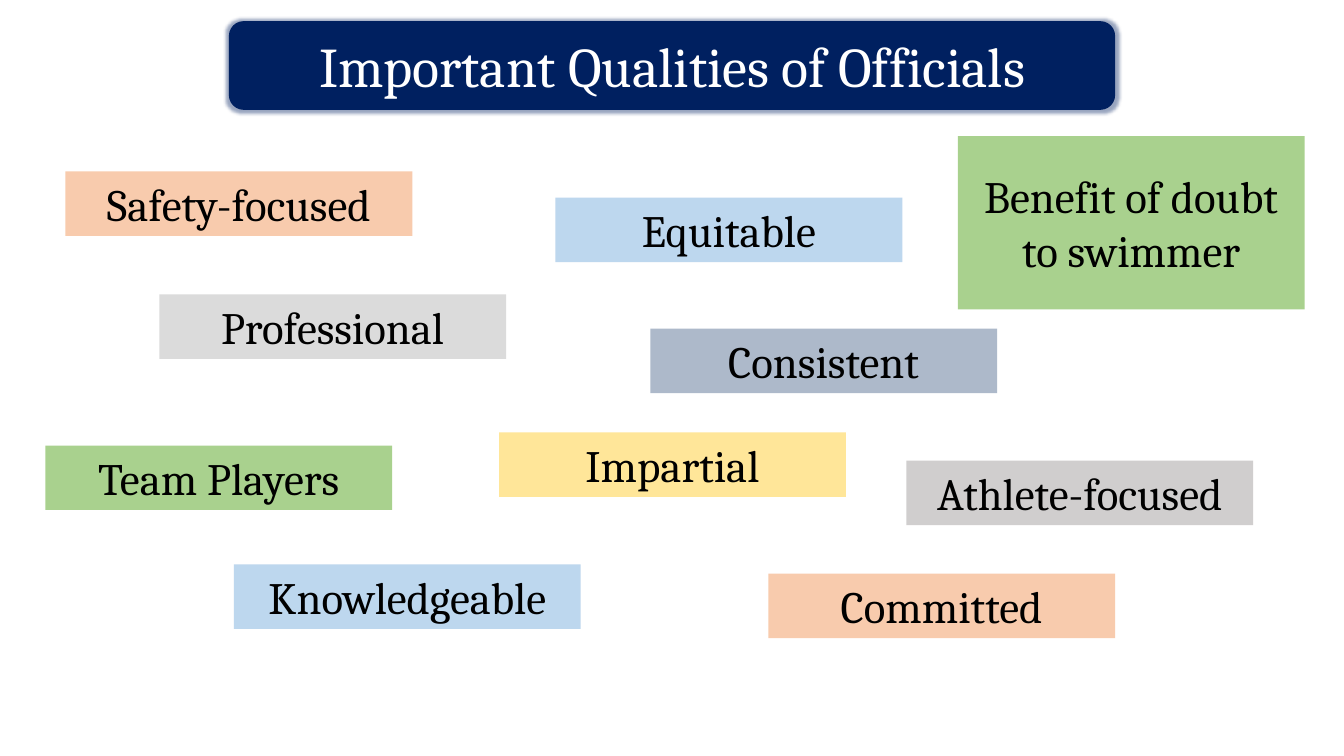
from lxml import etree
from pptx import Presentation
from pptx import util as u
from pptx.dml import color
from pptx.enum import shapes, text
from pptx.oxml import ns

FONT = "Cambria"
CARD_WIDTH, CARD_HEIGHT = 3.44, 0.64
QUALITIES = [
    ("Safety-focused", 0.65, 1.7, "F8CBAD"),
    ("Professional", 1.58, 2.92, "DBDBDB"),
    ("Impartial", 4.95, 4.29, "FFE699"),
    ("Team Players", 0.45, 4.42, "A9D18E"),
    ("Consistent", 6.45, 3.26, "ADB9CA"),
    ("Committed", 7.62, 5.69, "F8CBAD"),
    ("Knowledgeable", 2.32, 5.6, "BDD7EE"),
    ("Benefit of doubt to swimmer", 9.5, 1.35, "A9D18E", 1.72),
    ("Athlete-focused", 8.99, 4.57, "D0CECE"),
    ("Equitable", 5.51, 1.96, "BDD7EE"),
]


def rgb(value):
    """Turn a hex string into a colour."""
    return color.RGBColor.from_string(value)


def add_panel(page, kind, box, fill, words, size, ink):
    """Add a filled shape with centred text."""
    panel = page.shapes.add_shape(kind, *map(u.Inches, box))
    panel.shadow.inherit = False
    panel.fill.solid()
    panel.fill.fore_color.rgb = rgb(fill)
    panel.line.fill.background()
    frame = panel.text_frame
    frame.word_wrap = True
    frame.vertical_anchor = text.MSO_ANCHOR.MIDDLE
    para = frame.paragraphs[0]
    para.alignment = text.PP_ALIGN.CENTER
    span = para.add_run()
    span.text = words
    span.font.name = FONT
    span.font.size = u.Pt(size)
    span.font.color.rgb = rgb(ink)
    return panel


def add_glow(panel, hue, radius, alpha):
    """Surround a shape with a soft, partly transparent glow."""
    effects = panel._element.spPr.find(ns.qn("a:effectLst"))
    glow = etree.SubElement(effects, ns.qn("a:glow"), rad=str(u.Pt(radius)))
    tint = etree.SubElement(glow, ns.qn("a:srgbClr"), val=hue)
    etree.SubElement(tint, ns.qn("a:alpha"), val=str(alpha * 1000))


def add_title(page, box):
    """Add the glowing navy title banner."""
    banner = add_panel(page, shapes.MSO_SHAPE.ROUNDED_RECTANGLE, box, "002060",
                       "Important Qualities of Officials", 40, "FFFFFF")
    add_glow(banner, "002060", 5, 40)


def add_quality(page, words, left, top, fill, height=CARD_HEIGHT):
    """Add one coloured quality card."""
    card = add_panel(page, shapes.MSO_SHAPE.RECTANGLE,
                     (left, top, CARD_WIDTH, height), fill, words, 32, "000000")
    card.text_frame.auto_size = text.MSO_AUTO_SIZE.SHAPE_TO_FIT_TEXT


def main():
    """Build and save the slide."""
    deck = Presentation()
    deck.slide_width, deck.slide_height = u.Inches(13.33), u.Inches(7.5)
    page = deck.slides.add_slide(deck.slide_layouts[6])
    add_title(page, (2.27, 0.21, 8.79, 0.88))
    for quality in QUALITIES:
        add_quality(page, *quality)
    deck.save("out.pptx")


if __name__ == "__main__":
    main()
